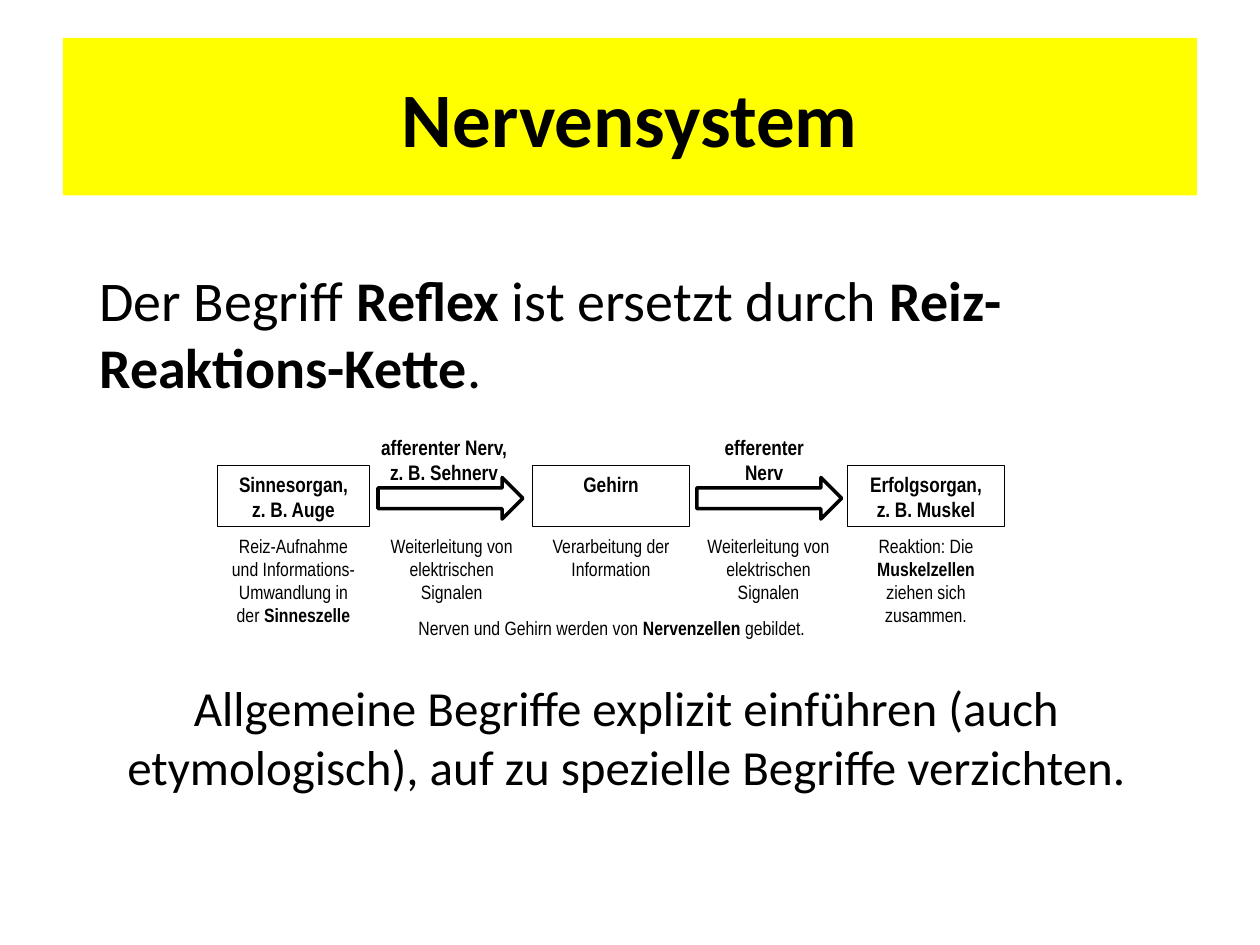
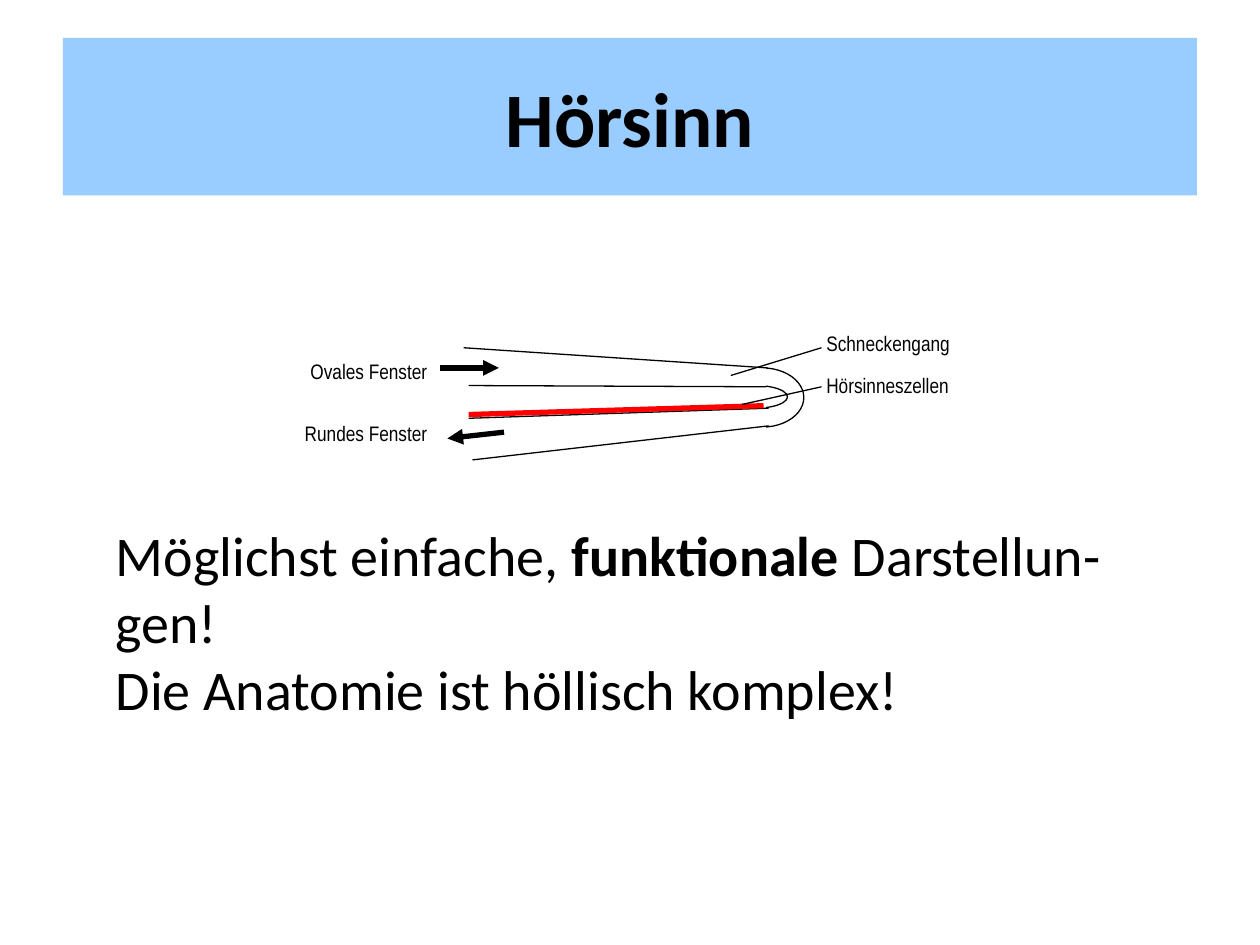
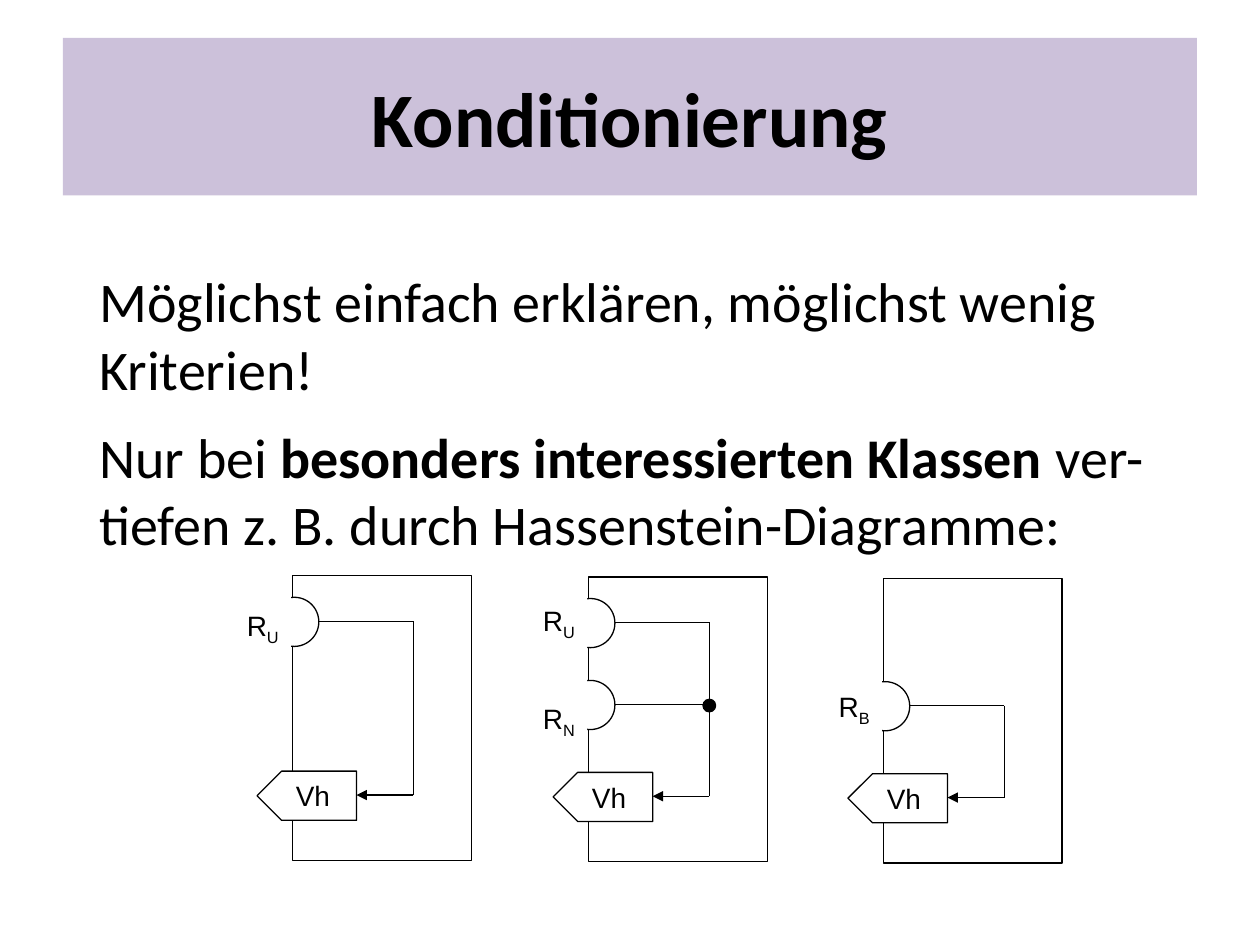
from dataclasses import dataclass

from lxml.etree import SubElement as Sub
from pptx import Presentation as Deck
from pptx.dml.color import RGBColor as Rgb
from pptx.enum.shapes import MSO_CONNECTOR as Link
from pptx.enum.shapes import MSO_SHAPE as Form
from pptx.enum.text import MSO_ANCHOR as Anchor
from pptx.enum.text import PP_ALIGN as Align
from pptx.oxml.ns import qn
from pptx.util import Pt

SCALE = 9144


@dataclass(frozen=True)
class Type:
    """Hold one kind of lettering."""
    font: str
    size: int
    bold: bool = False


@dataclass(frozen=True)
class Theme:
    """Hold the colours, line widths and type of the deck."""
    ink: str = "000000"
    paper: str = "FFFFFF"
    yellow: str = "FFFF00"
    blue: str = "99CCFF"
    purple: str = "CCC1DA"
    red: str = "FF0000"
    hair: float = 0.5
    thin: float = 0.75
    mid: float = 2
    thick: float = 3
    title: Type = Type("Calibri", 44, True)
    body: Type = Type("Calibri", 32)
    close: Type = Type("Calibri", 28)
    head: Type = Type("Arial Narrow", 12, True)
    label: Type = Type("Arial Narrow", 12)
    note: Type = Type("Arial Narrow", 11)
    sign: Type = Type("Arial", 16)


LOOK = Theme()


def px(*nums):
    """Turn px into EMU."""
    return [num * SCALE for num in nums]


def write(shape, paras, kind, align=Align.LEFT, gap=0, sub=False,
          anchor=Anchor.TOP, top=5):
    """Fill a shape with text; every second run is bold or lowered."""
    frame = shape.text_frame
    frame.word_wrap = True
    frame.vertical_anchor = anchor
    frame.margin_top = px(top)[0]
    for idx, runs in enumerate(paras):
        para = frame.add_paragraph() if idx else frame.paragraphs[0]
        para.alignment = align
        if idx:
            para.space_before = Pt(gap)
        for pos, text in enumerate(runs):
            run = para.add_run()
            run.text = text
            font = run.font
            font.name = kind.font
            font.size = Pt(kind.size)
            font.color.rgb = Rgb.from_string(LOOK.ink)
            odd = pos % 2 == 1
            font.bold = kind.bold or (odd and not sub)
            if odd and sub:
                run._r.get_or_add_rPr().set("baseline", "-25000")


def draw(slide, form, area, fill=LOOK.paper, line=None):
    """Add a preset shape with flat fill and outline."""
    shape = slide.shapes.add_shape(form, *px(*area))
    shape.shadow.inherit = False
    if fill:
        shape.fill.solid()
        shape.fill.fore_color.rgb = Rgb.from_string(fill)
    else:
        shape.fill.background()
    if line:
        shape.line.color.rgb = Rgb.from_string(LOOK.ink)
        shape.line.width = Pt(line)
    else:
        shape.line.fill.background()
    return shape


def box(slide, area, paras, kind, align=Align.CENTER, line=None, **opts):
    """Add a white box with text."""
    write(draw(slide, Form.RECTANGLE, area, line=line), paras, kind, align, **opts)


def text(slide, area, paras, kind, align=Align.LEFT, gap=0):
    """Add plain text."""
    write(slide.shapes.add_textbox(*px(*area)), paras, kind, align, gap)


def wire(slide, start, end, width=LOOK.thin, tint=LOOK.ink, arrow=False):
    """Add a straight line, with an arrowhead at its end if asked."""
    link = slide.shapes.add_connector(Link.STRAIGHT, *px(*start, *end))
    link.line.color.rgb = Rgb.from_string(tint)
    link.line.width = Pt(width)
    if arrow:
        Sub(link.line._get_or_add_ln(), qn("a:tailEnd"), type="triangle")
    Sub(link._element.spPr, qn("a:effectLst"))


def start(deck, title, tint):
    """Add a slide with its title band."""
    slide = deck.slides.add_slide(deck.slide_layouts[6])
    band = draw(slide, Form.RECTANGLE, (50, 30, 900, 125), tint)
    write(band, [(title,)], LOOK.title, Align.CENTER, anchor=Anchor.MIDDLE)
    return slide


def nerves(deck):
    """Build the slide on the nervous system."""
    slide = start(deck, "Nervensystem", LOOK.yellow)
    text(slide, (69, 206, 862, 172), [("Der Begriff ", "Reflex", " ist ersetzt durch ",
         "Reiz-Reaktions-Kette", ".")], LOOK.body)
    pass_on = ("Weiterleitung von elektrischen Signalen",)
    notes = (
        (173, 120, 81, ("Reiz-Aufnahme und Informations-Umwandlung in der ", "Sinneszelle")),
        (294, 129, 65, pass_on),
        (423, 124, 65, ("Verarbeitung der Information",)),
        (547, 126, 65, pass_on),
        (673, 124, 81, ("Reaktion: Die ", "Muskelzellen", " ziehen sich zusammen.")),
    )
    for left, wide, high, runs in notes:
        box(slide, (left, 419, wide, high), [runs], LOOK.note)
    for left in (300, 553):
        draw(slide, Form.RIGHT_ARROW, (left, 379, 115, 33), None, LOOK.mid)
    for left, wide, name in ((291, 123, "afferenter Nerv, z. B. Sehnerv"),
                             (559, 95, "efferenter Nerv")):
        text(slide, (left, 340, wide, 57), [(name,)], LOOK.head, Align.CENTER)
    for left, wide, name in ((173, 120, "Sinnesorgan, z.\u00a0B. Auge"),
                             (423, 124, "Gehirn"),
                             (673, 124, "Erfolgsorgan, z.\u00a0B. Muskel")):
        box(slide, (left, 369, wide, 49), [(name,)], LOOK.head, line=LOOK.hair)
    box(slide, (303, 484, 365, 35), [("Nerven und Gehirn werden von ", "Nervenzellen",
        " gebildet.")], LOOK.note)
    text(slide, (88, 533, 818, 104), [("Allgemeine Begriffe explizit einführen (auch "
         "etymologisch), auf zu spezielle Begriffe verzichten.",)], LOOK.close, Align.CENTER)


def hearing(deck):
    """Build the slide on hearing."""
    slide = start(deck, "Hörsinn", LOOK.blue)
    box(slide, (223, 280, 126, 86), [("Ovales Fenster",), ("Rundes Fenster",)],
        LOOK.label, Align.RIGHT, gap=21)
    for area in ((572, 292, 66, 47), (574, 306, 51, 18)):
        draw(slide, Form.OVAL, area, line=LOOK.thin)
    draw(slide, Form.RECTANGLE, (551, 277, 57, 79))
    for near, far in (((609, 292), (368, 276)), ((610, 338), (375, 365)),
                      ((608, 307), (372, 306)), ((610, 324), (372, 332))):
        wire(slide, near, far)
    for tail, tip in (((349, 292), (396, 292)), ((400, 343), (355, 348))):
        wire(slide, tail, tip, LOOK.thick, arrow=True)
    wire(slide, (372, 329), (606, 322), LOOK.thick, LOOK.red)
    box(slide, (646, 257, 131, 75), [("Schneckengang",), ("Hörsinneszellen",)],
        LOOK.label, Align.LEFT, gap=10)
    for spot, name in (((580, 298), (652, 276)), ((589, 321), (652, 307))):
        wire(slide, spot, name)
    text(slide, (82, 408, 850, 172), [
        ("Möglichst einfache, ", "funktionale ", "Darstellun-gen!"),
        ("Die Anatomie ist höllisch komplex!",)], LOOK.body)


def circuit(slide, x, y, cells, mask, top):
    """Draw one loop with its receptors, given as letter and offset."""
    draw(slide, Form.RECTANGLE, (x, y, 142, 226), line=LOOK.thin)
    for _, drop in cells:
        draw(slide, Form.OVAL, (x - 18, y + drop, 39, 39), line=LOOK.thin)
    plate = draw(slide, Form.PENTAGON, (x - 28, y + 155, 79, 39), line=LOOK.thin)
    plate._element.spPr.xfrm.set("flipH", "1")
    write(plate, [("Vh",)], LOOK.sign, Align.CENTER, anchor=Anchor.MIDDLE)
    drop, high = mask
    box(slide, (x - 62, y + drop, 61, high), [("R", name) for name, _ in cells],
        LOOK.sign, Align.RIGHT, gap=34, sub=True, top=top)
    bend, foot = x + 96, y + 174
    rows = [y + drop + 19 for _, drop in cells]
    for row in rows:
        wire(slide, (x + 21, row), (bend, row))
    for row in rows[1:]:
        draw(slide, Form.OVAL, (bend - 5, row - 4, 10, 10), LOOK.ink, LOOK.thin)
    wire(slide, (bend, rows[0]), (bend, foot))
    wire(slide, (bend, foot), (x + 51, foot), arrow=True)


def learning(deck):
    """Build the slide on conditioning."""
    slide = start(deck, "Konditionierung", LOOK.purple)
    text(slide, (69, 207, 862, 313), [
        ("Möglichst einfach erklären, möglichst wenig Kriterien!",),
        ("Nur bei ", "besonders interessierten Klassen ",
         "ver-tiefen z. B. durch Hassenstein-Diagramme:")], LOOK.body, gap=12)
    circuit(slide, 232, 457, [("U", 17)], (1, 74), 25)
    circuit(slide, 467, 458, [("U", 17), ("N", 82)], (16, 128), 5)
    circuit(slide, 701, 459, [("B", 82)], (56, 87), 32)


def main():
    """Build and save the deck."""
    deck = Deck()
    deck.slide_width, deck.slide_height = px(1000, 750)
    nerves(deck)
    hearing(deck)
    learning(deck)
    deck.save("out.pptx")


if __name__ == "__main__":
    main()
